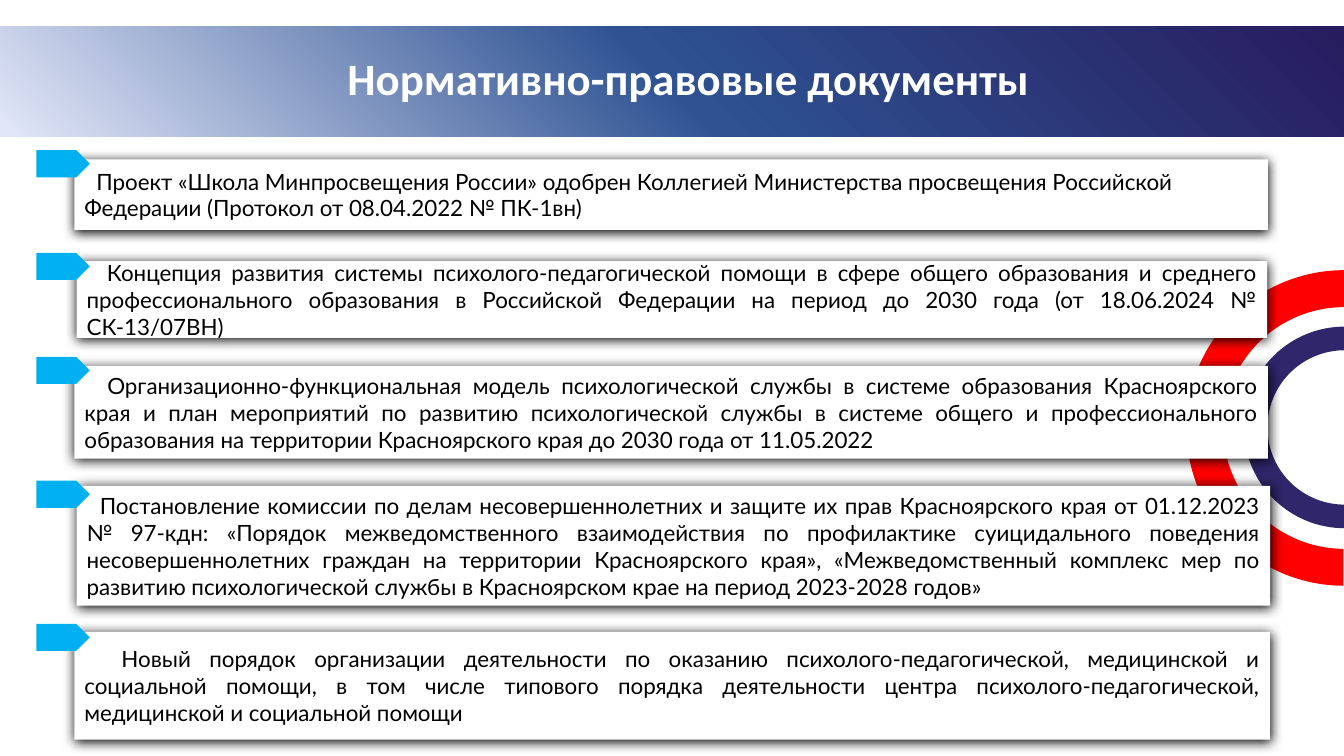
from dataclasses import dataclass
from lxml import etree
from pptx import Presentation
from pptx.dml.color import RGBColor
from pptx.enum import shapes, text
from pptx.oxml import parse_xml
from pptx.util import Pt

NS = 'xmlns:a="http://schemas.openxmlformats.org/drawingml/2006/main"'
KIND = shapes.MSO_SHAPE
ALIGN = text.PP_ALIGN


@dataclass(frozen=True)
class Theme:
    white: str = "FFFFFF"
    ink: str = "000000"
    navy: str = "2F266B"
    red: str = "FF0000"
    sky: str = "00B0F0"
    band: tuple = ((0, "271C5E"), (50, "2E5292"), (99, "E0E5F7"))
    head: str = "Calibri"
    body: str = "Lato"
    head_size: int = 32
    body_size: int = 16


class Deck:
    def __init__(self, theme):
        self.theme = theme
        self.prs = Presentation()
        self.prs.slide_width, self.prs.slide_height = Pt(960), Pt(540)
        self.slide = self.prs.slides.add_slide(self.prs.slide_layouts[5])

    def shape(self, kind, box, color):
        item = self.slide.shapes.add_shape(kind, *map(Pt, box))
        item.shadow.inherit = False
        item.fill.solid()
        item.fill.fore_color.rgb = RGBColor.from_string(color)
        item.line.fill.background()
        return item

    def font(self, para, name, size, color, bold=False):
        for run in para.runs:
            run.font.name, run.font.size, run.font.bold = name, Pt(size), bold
            run.font.color.rgb = RGBColor.from_string(color)

    def ring(self, left, top, size, color):
        """Half ring that opens to the right."""
        arc = self.shape(KIND.BLOCK_ARC, (left, top, size, size), color)
        arc.rotation = 270
        for i, value in enumerate((108.239, 0.363, 0.117)):
            arc.adjustments[i] = value

    def band(self, top, height):
        """Full-width bar shaded from the top right corner."""
        bar = self.shape(KIND.RECTANGLE, (0, top, 960, height), self.theme.white)
        stops = "".join(
            f'<a:gs pos="{pos * 1000}"><a:srgbClr val="{color}"/></a:gs>'
            for pos, color in self.theme.band)
        props = bar.fill._xPr
        props.replace(props.find("{*}solidFill"), parse_xml(
            f'<a:gradFill {NS} rotWithShape="1"><a:gsLst>{stops}</a:gsLst>'
            '<a:lin ang="8100000" scaled="0"/></a:gradFill>'))

    def title(self, words, box):
        t, item = self.theme, self.slide.shapes.title
        item.left, item.top, item.width, item.height = map(Pt, box)
        # The title sits above the band
        item._element.getparent().append(item._element)
        frame = item.text_frame
        frame.text = words
        frame.word_wrap = True
        frame.vertical_anchor = text.MSO_ANCHOR.MIDDLE
        para = frame.paragraphs[0]
        para.alignment, para.line_spacing = ALIGN.CENTER, 0.9
        self.font(para, t.head, t.head_size, t.white, True)

    def card(self, box, words, indent, align):
        t = self.theme
        item = self.shape(KIND.RECTANGLE, box, t.white)
        glow = item._element.spPr.find("{*}effectLst")
        glow.append(parse_xml(
            f'<a:outerShdw {NS} blurRad="{Pt(8.5)}" dist="{Pt(1)}" '
            'dir="5400000" algn="ctr" rotWithShape="0">'
            f'<a:srgbClr val="{t.ink}"/></a:outerShdw>'))
        frame = item.text_frame
        frame.text = words
        frame.word_wrap = True
        frame.vertical_anchor = text.MSO_ANCHOR.MIDDLE
        para = frame.paragraphs[0]
        para.alignment = align
        para._p.get_or_add_pPr().set("indent", str(Pt(indent)))
        self.font(para, t.body, t.body_size, t.ink)

    def tag(self, top):
        self.shape(KIND.PENTAGON, (26, top, 38.2, 19.4), self.theme.sky)


# tag top, card box, first-line indent, alignment, words
ROWS = (
    (107.3, (53.2, 113.8, 852.5, 50.4), 8.6, ALIGN.LEFT,
     "Проект «Школа Минпросвещения России» одобрен Коллегией Министерства "
     "просвещения Российской Федерации (Протокол от 08.04.2022 № ПК-1вн)"),
    (180.6, (54.8, 186.6, 850.3, 54.7), 14.5, ALIGN.JUSTIFY,
     "Концепция развития системы психолого-педагогической помощи в сфере "
     "общего образования и среднего профессионального образования в "
     "Российской Федерации на период до 2030 года (от 18.06.2024 № "
     "СК-13/07ВН)"),
    (254.9, (53.2, 261.4, 852.5, 66.2), 16.4, ALIGN.JUSTIFY,
     "Организационно-функциональная модель психологической службы в системе "
     "образования Красноярского края и план мероприятий по развитию "
     "психологической службы в системе общего и профессионального "
     "образования на территории Красноярского края до 2030 года от "
     "11.05.2022"),
    (343.4, (54.8, 347, 852.5, 85.7), 9.5, ALIGN.JUSTIFY,
     "Постановление комиссии по делам несовершеннолетних и защите их прав "
     "Красноярского края от 01.12.2023 № 97-кдн: «Порядок межведомственного "
     "взаимодействия по профилактике суицидального поведения "
     "несовершеннолетних граждан на территории Красноярского края», "
     "«Межведомственный комплекс мер по развитию психологической службы в "
     "Красноярском крае на период 2023-2028 годов»"),
    (445.6, (53.2, 451.4, 853.9, 77), 26.5, ALIGN.JUSTIFY,
     "Новый порядок организации деятельности по оказанию "
     "психолого-педагогической, медицинской и социальной помощи, в том числе "
     "типового порядка деятельности центра психолого-педагогической, "
     "медицинской и социальной помощи"),
)


def main():
    theme = Theme()
    deck = Deck(theme)
    deck.ring(888.5, 233.3, 144, theme.navy)
    deck.ring(847.4, 193, 225.4, theme.red)
    deck.band(18.7, 79.2)
    deck.title("Нормативно-правовые документы", (77.8, 24.5, 828, 67))
    for top, box, indent, align, words in ROWS:
        deck.card(box, words, indent, align)
        deck.tag(top)
    deck.prs.save("out.pptx")


if __name__ == "__main__":
    main()
